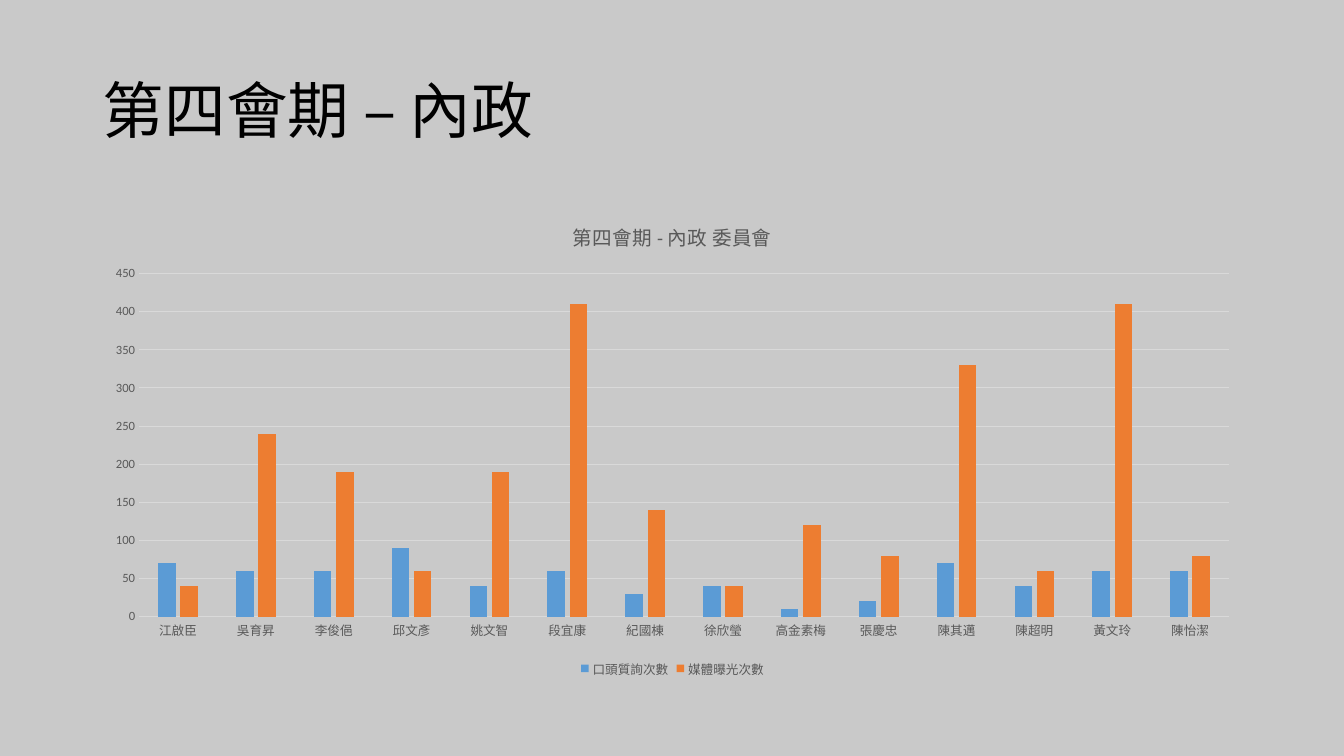
"""Build a slide comparing committee questions with media exposure."""
from dataclasses import dataclass

from lxml.etree import SubElement
from pptx import Presentation
from pptx.chart.chart import Chart
from pptx.chart.data import CategoryChartData
from pptx.dml.color import RGBColor
from pptx.enum.chart import XL_CHART_TYPE as ChartType
from pptx.enum.chart import XL_LEGEND_POSITION as LegendPosition
from pptx.enum.chart import XL_TICK_MARK as TickMark
from pptx.enum.text import MSO_ANCHOR as Anchor
from pptx.enum.text import PP_ALIGN as Align
from pptx.oxml.ns import qn
from pptx.slide import Slide
from pptx.text.text import Font
from pptx.util import Inches, Pt

COLORS = {
    "background": "C9C9C9",
    "title": "000000",
    "label": "595959",
    "line": "D9D9D9",
    "questions": "5B9BD5",
    "media": "ED7D31",
}
CHART_FONT = "Calibri"
TITLE_FONT = "Noto Sans CJK JP"
LEGISLATORS = [
    "江啟臣", "吳育昇", "李俊俋", "邱文彥", "姚文智", "段宜康", "紀國棟",
    "徐欣瑩", "高金素梅", "張慶忠", "陳其邁", "陳超明", "黃文玲", "陳怡潔",
]


@dataclass
class CountSeries:
    """Hold one set of columns."""

    name: str
    color: str
    values: list[int]


COUNTS = [
    CountSeries("口頭質詢次數", "questions",
                [70, 60, 60, 90, 40, 60, 30, 40, 10, 20, 70, 40, 60, 60]),
    CountSeries("媒體曝光次數", "media",
                [40, 240, 190, 60, 190, 410, 140, 40, 120, 80, 330, 60, 410, 80]),
]


def rgb(name: str) -> RGBColor:
    """Return a named colour."""
    return RGBColor.from_string(COLORS[name])


def format_font(font: Font, size: float, color: str, name: str = CHART_FONT) -> None:
    """Set the size, colour and typeface of a font."""
    font.size = Pt(size)
    font.bold = False
    font.name = name
    font.color.rgb = rgb(color)


def add_title(slide: Slide, text: str) -> None:
    """Place and format the slide title."""
    title = slide.shapes.title
    title.left, title.top = Inches(0.92), Inches(0.4)
    title.width, title.height = Inches(11.5), Inches(1.45)
    title.text_frame.text = text
    title.text_frame.vertical_anchor = Anchor.MIDDLE
    paragraph = title.text_frame.paragraphs[0]
    paragraph.alignment = Align.LEFT
    paragraph.line_spacing = 0.9
    font = paragraph.runs[0].font
    format_font(font, 44, "title", TITLE_FONT)
    SubElement(paragraph.runs[0]._r.get_or_add_rPr(), qn("a:ea"), typeface=TITLE_FONT)


def format_axes(chart: Chart) -> None:
    """Style both axes and the gridlines."""
    for axis in (chart.category_axis, chart.value_axis):
        axis.major_tick_mark = axis.minor_tick_mark = TickMark.NONE
        format_font(axis.tick_labels.font, 9, "label")
    value_axis = chart.value_axis
    value_axis.minimum_scale, value_axis.maximum_scale = 0, 450
    value_axis.major_unit = 50
    value_axis.format.line.fill.background()
    for line in (chart.category_axis.format.line, value_axis.major_gridlines.format.line):
        line.color.rgb = rgb("line")
        line.width = Pt(0.75)


def add_counts_chart(slide: Slide, title: str) -> None:
    """Add the clustered column chart."""
    data = CategoryChartData()
    data.categories = LEGISLATORS
    for count in COUNTS:
        data.add_series(count.name, count.values)
    chart = slide.shapes.add_chart(
        ChartType.COLUMN_CLUSTERED,
        Inches(0.92), Inches(2), Inches(11.5), Inches(4.76), data,
    ).chart
    format_font(chart.font, 10, "title")

    chart.has_title = True
    chart.chart_title.include_in_layout = False
    chart.chart_title.text_frame.text = title
    format_font(chart.chart_title.text_frame.paragraphs[0].runs[0].font, 14, "label")

    chart.has_legend = True
    chart.legend.position = LegendPosition.BOTTOM
    chart.legend.include_in_layout = False
    format_font(chart.legend.font, 9, "label")
    format_axes(chart)

    plot = chart.plots[0]
    plot.vary_by_categories = False
    plot.gap_width, plot.overlap = 219, -27
    for series, count in zip(plot.series, COUNTS):
        series.format.fill.solid()
        series.format.fill.fore_color.rgb = rgb(count.color)


def main() -> None:
    """Build and save the presentation."""
    presentation = Presentation()
    presentation.slide_width, presentation.slide_height = Inches(13.33), Inches(7.5)
    slide = presentation.slides.add_slide(presentation.slide_layouts.get_by_name("Title Only"))
    slide.background.fill.solid()
    slide.background.fill.fore_color.rgb = rgb("background")
    add_title(slide, "第四會期 – 內政")
    add_counts_chart(slide, "第四會期 - 內政 委員會")
    presentation.save("out.pptx")


if __name__ == "__main__":
    main()
